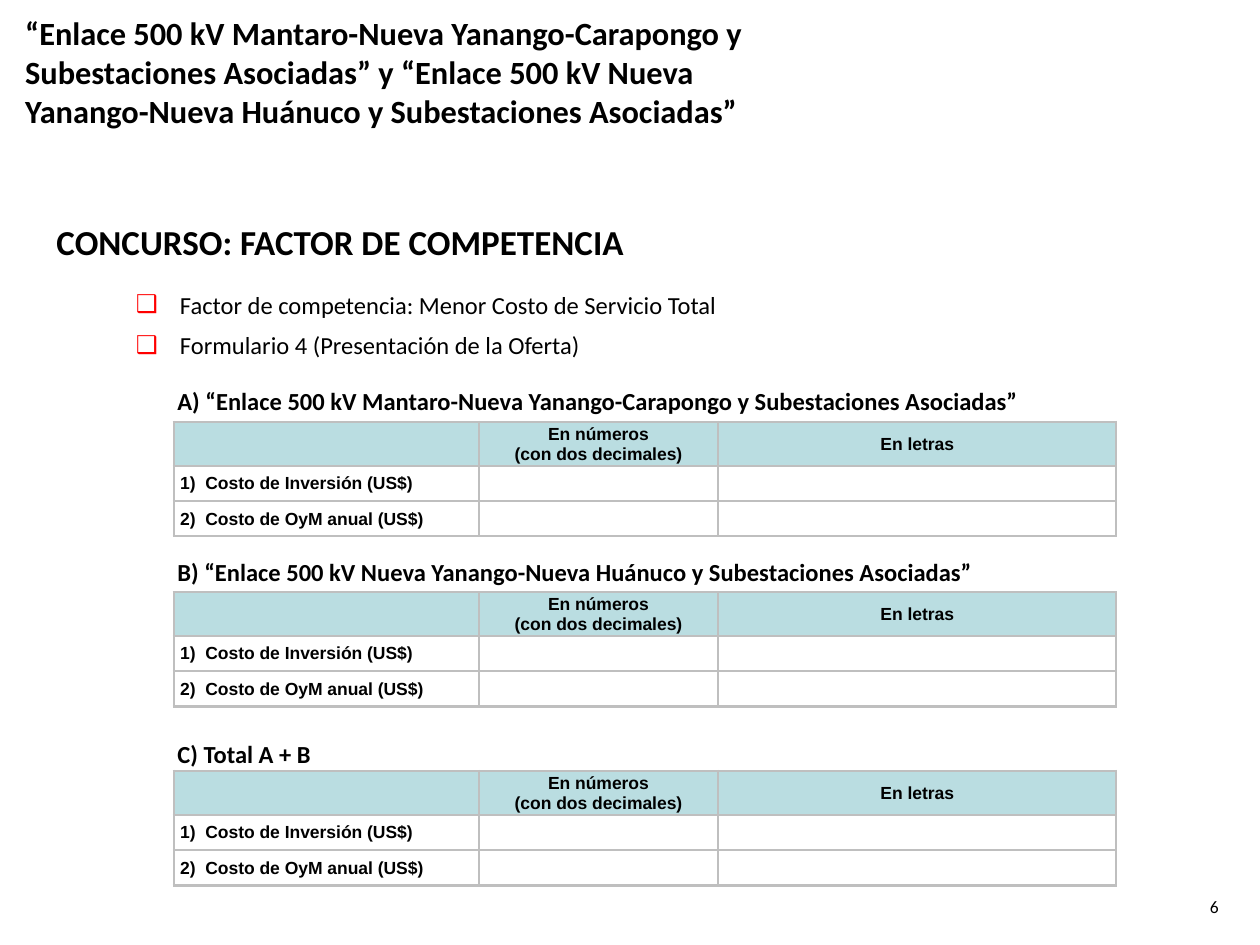
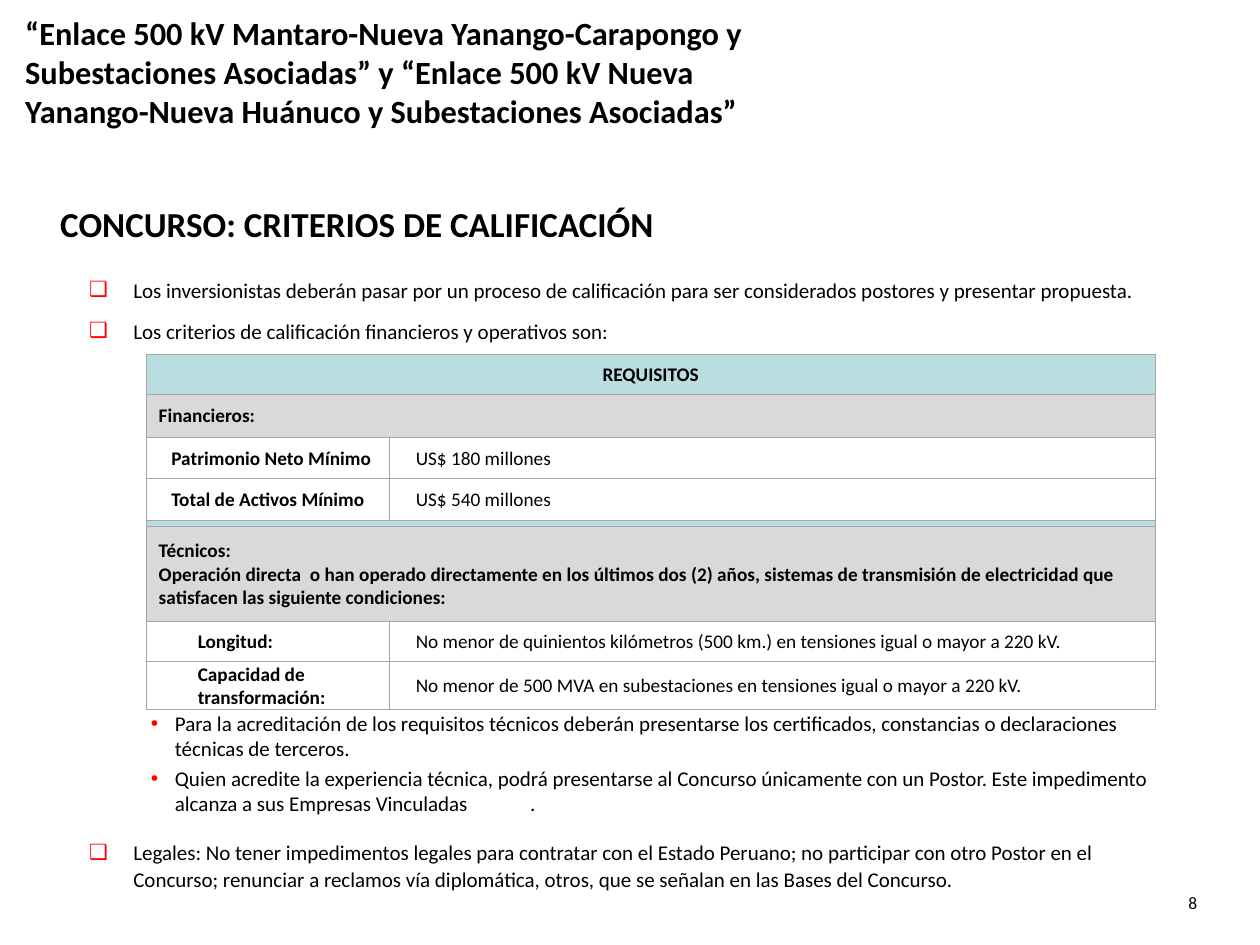
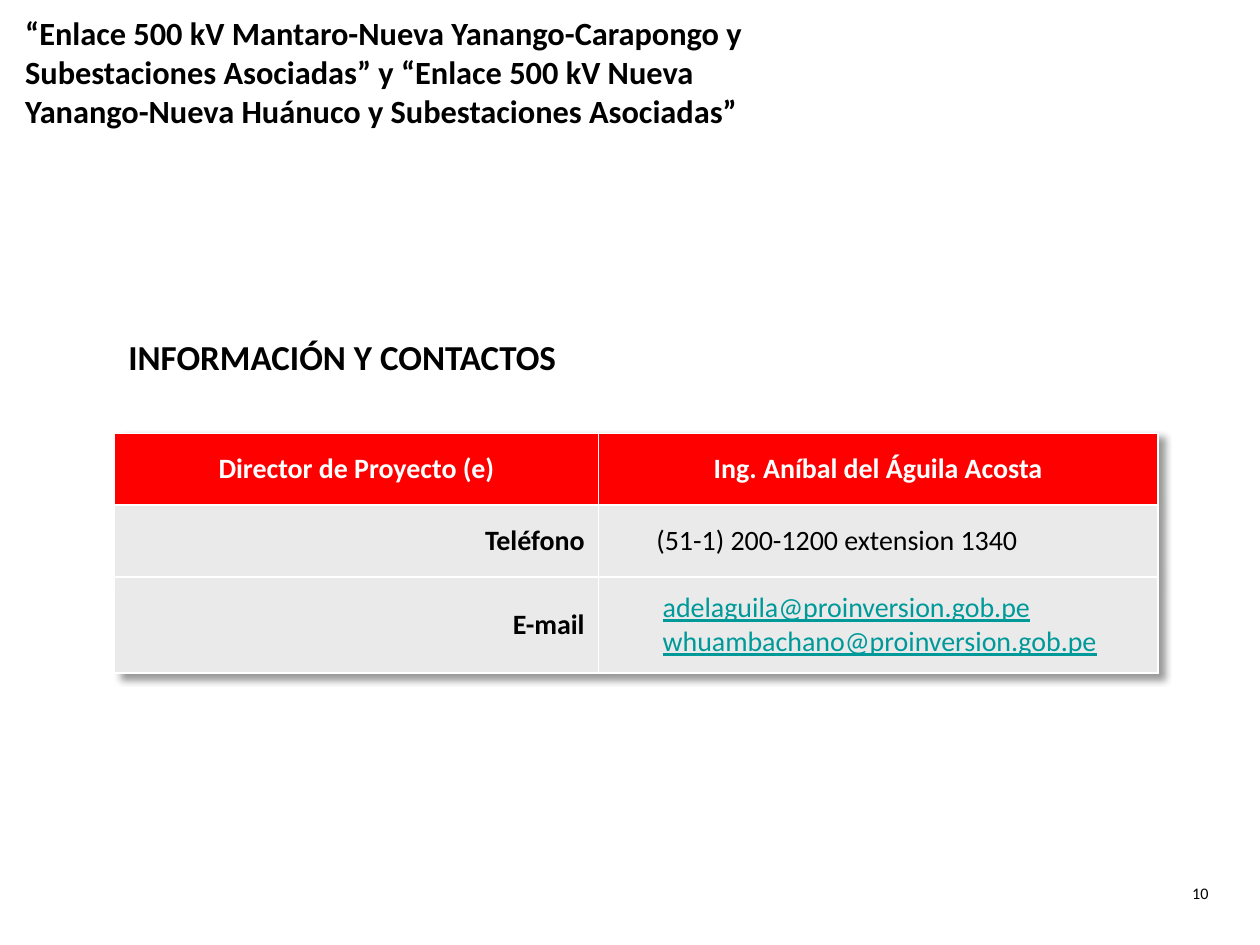
from dataclasses import dataclass

from lxml import etree
from pptx import Presentation
from pptx import util as u
from pptx.dml.color import RGBColor
from pptx.enum import text
from pptx.oxml.ns import qn


@dataclass(frozen=True)
class Theme:
    font: str = "Calibri"
    form_font: str = "Arial"
    black: str = "000000"
    white: str = "FFFFFF"
    red: str = "FF0000"
    aqua: str = "BADDE1"
    grey: str = "D9D9D9"
    pale: str = "EAEAEA"
    link: str = "009999"
    form_rule: str = "BFBFBF"
    criteria_rule: str = "A6A6A6"
    title: float = 18.5
    heading: float = 20
    contact: float = 16
    item: float = 14
    body: float = 12
    criteria: float = 11
    small: float = 10


T = Theme()
LEFT, CENTER, RIGHT, JUSTIFY = (text.PP_ALIGN.LEFT, text.PP_ALIGN.CENTER,
                                text.PP_ALIGN.RIGHT, text.PP_ALIGN.JUSTIFY)
MIDDLE = text.MSO_ANCHOR.MIDDLE


@dataclass
class Para:
    words: str
    size: float
    bold: bool = False
    color: str = T.black
    font: str = T.font
    align: int = LEFT
    indent: float = 0
    hang: float = 0
    bullet: str = ""
    before: float = 0
    after: float = 0
    spacing: float = 1.0
    underline: bool = False


def write(frame, paras, anchor=text.MSO_ANCHOR.TOP):
    frame.word_wrap = True
    frame.vertical_anchor = anchor
    for number, para in enumerate(paras):
        p = frame.add_paragraph() if number else frame.paragraphs[0]
        p.text = para.words
        props = p._p.get_or_add_pPr()
        props.set("marL", str(u.Inches(para.indent)))
        props.set("indent", str(-u.Inches(para.hang)))
        if para.bullet:
            color = etree.SubElement(props, qn("a:buClr"))
            etree.SubElement(color, qn("a:srgbClr"), val=T.red)
            etree.SubElement(props, qn("a:buFont"), typeface=T.form_font)
            etree.SubElement(props, qn("a:buChar"), char=para.bullet)
        p.alignment = para.align
        p.line_spacing = para.spacing
        p.space_before, p.space_after = u.Pt(para.before), u.Pt(para.after)
        p.font.name, p.font.size, p.font.bold = para.font, u.Pt(para.size), para.bold
        p.font.color.rgb = RGBColor.from_string(para.color)
        if para.underline:
            p.font.underline = True


def add_grid(slide, left, top, widths, heights, rule, insets, rows):
    """Add a table of (fill, paragraphs) cells; a row with one cell spans all columns."""
    rule_color, rule_width = rule
    table = slide.shapes.add_table(
        len(heights), len(widths), u.Inches(left), u.Inches(top),
        u.Inches(sum(widths)), u.Inches(sum(heights))).table
    table.first_row = table.horz_banding = False
    props = table._tbl.tblPr
    props.find(qn("a:tableStyleId")).text = "{2D5ABB26-0587-4C30-8999-92F81FD0307C}"
    for column, width in zip(table.columns, widths):
        column.width = u.Inches(width)
    for row, height in zip(table.rows, heights):
        row.height = u.Inches(height)
    for r, row in enumerate(rows):
        if len(row) == 1:
            table.cell(r, 0).merge(table.cell(r, len(widths) - 1))
        for c in range(len(widths)):
            cell = table.cell(r, c)
            fill, paras = row[c] if c < len(row) else (row[0][0], [])
            (cell.margin_left, cell.margin_top,
             cell.margin_right, cell.margin_bottom) = map(u.Inches, insets)
            for side in ("lnL", "lnR", "lnT", "lnB"):
                line = etree.SubElement(cell._tc.get_or_add_tcPr(), qn("a:" + side),
                                        w=str(u.Pt(rule_width)))
                solid = etree.SubElement(line, qn("a:solidFill"))
                etree.SubElement(solid, qn("a:srgbClr"), val=rule_color)
            if fill:
                cell.fill.solid()
                cell.fill.fore_color.rgb = RGBColor.from_string(fill)
            else:
                cell.fill.background()
            if paras:
                write(cell.text_frame, paras)
            else:
                etree.SubElement(cell.text_frame.paragraphs[0]._p,
                                 qn("a:endParaRPr"), sz="100")
            cell.vertical_anchor = MIDDLE
    return table


prs = Presentation()
prs.slide_width, prs.slide_height = u.Inches(10), u.Inches(7.5)
PROJECT_A = "Enlace 500 kV Mantaro-Nueva Yanango-Carapongo y Subestaciones Asociadas"
PROJECT_B = "Enlace 500 kV Nueva Yanango-Nueva Huánuco y Subestaciones Asociadas"

# Project title, section heading and page number
sections = [
    ("CONCURSO: FACTOR DE COMPETENCIA", (0.35, 1.62), "6", (9.23, 7.06), T.small),
    ("CONCURSO: CRITERIOS DE CALIFICACIÓN", (0.38, 1.47), "8", (9.06, 7.03), T.small),
    ("INFORMACIÓN Y CONTACTOS", (0.92, 2.53), "10", (9.15, 6.96), 9.2),
]
for heading, heading_at, page, page_at, page_size in sections:
    slide = prs.slides.add_slide(prs.slide_layouts[5])
    title = slide.shapes.title
    title.left, title.top = 0, u.Inches(0.13)
    title.width, title.height = u.Inches(6.56), u.Inches(0.87)
    title.text_frame.auto_size = text.MSO_AUTO_SIZE.NONE
    write(title.text_frame, [Para(f"“{PROJECT_A}” y “{PROJECT_B}”", T.title,
                                  bold=True, indent=0.1)], MIDDLE)
    heading_box = slide.shapes.add_textbox(*map(u.Inches, (*heading_at, 5.6, 0.6)))
    write(heading_box.text_frame, [Para(heading, T.heading, bold=True)], MIDDLE)
    page_box = slide.shapes.add_textbox(*map(u.Inches, (*page_at, 0.54, 0.32)))
    write(page_box.text_frame, [Para(page, page_size, align=RIGHT)])
factor, criteria, contacts = prs.slides

# Competition factor: two points and three offer forms
points = ["Factor de competencia: Menor Costo de Servicio Total",
          "Formulario 4 (Presentación de la Oferta)"]
for number, point in enumerate(points):
    point_box = factor.shapes.add_textbox(
        *map(u.Inches, (0.98, 2.25 + 0.32 * number, 7.88, 0.35)))
    write(point_box.text_frame,
          [Para(point, T.item, bullet="❑", indent=0.35, hang=0.35)])

form_style = dict(size=T.small, bold=True, font=T.form_font, spacing=1.04)
form_rows = [[(T.aqua, []),
              (T.aqua, [Para(words, align=CENTER, **form_style)
                        for words in ("En números", "(con dos decimales)")]),
              (T.aqua, [Para("En letras", align=CENTER, **form_style)])]]
for cost in ("1)  Costo de Inversión (US$)", "2)  Costo de OyM anual (US$)"):
    form_rows.append([(None, [Para(cost, align=JUSTIFY, **form_style)]),
                      (None, []), (None, [])])

forms = [(f"A) “{PROJECT_A}”", 3.01, 3.35, 0.32),
         (f"B) “{PROJECT_B}”", 4.37, 4.7, 0.34),
         ("C) Total A + B", 5.81, 6.12, 0.34)]
for label, label_top, form_top, header_height in forms:
    label_box = factor.shapes.add_textbox(*map(u.Inches, (1.31, label_top, 7.5, 0.34)))
    write(label_box.text_frame, [Para(label, T.item, bold=True)], MIDDLE)
    add_grid(factor, 1.38, form_top, [2.42, 1.9, 3.16], [header_height, 0.28, 0.28],
             (T.form_rule, 1.5), (0.05, 0, 0.05, 0), form_rows)

# Qualification criteria: text that runs above and below the requirements table
box_item = dict(size=T.body, bullet="❑", indent=0.35, hang=0.35)
dot_item = dict(size=T.body, bullet="•", indent=0.68, hang=0.19)
criteria_box = criteria.shapes.add_textbox(*map(u.Inches, (0.61, 2.15, 8.72, 4.98)))
write(criteria_box.text_frame, [
    Para("Los inversionistas deberán pasar por un proceso de calificación para ser "
         "considerados postores y presentar propuesta.", after=9, **box_item),
    Para("Los criterios de calificación financieros y operativos son:",
         after=6, **box_item),
    Para("Para la acreditación de los requisitos técnicos deberán presentarse los "
         "certificados, constancias o declaraciones técnicas de terceros.",
         before=204, **dot_item),
    Para("Quien acredite la experiencia técnica, podrá presentarse al Concurso "
         "únicamente con un Postor. Este impedimento alcanza a sus Empresas "
         "Vinculadas\t.", before=2.4, **dot_item),
    Para("Legales: No tener impedimentos legales para contratar con el Estado Peruano; "
         "no participar con otro Postor en el Concurso; renunciar a reclamos vía "
         "diplomática, otros, que se señalan en las Bases del Concurso.",
         before=12, after=9, spacing=1.1, **box_item),
])

strong = dict(size=T.criteria, bold=True)
financial, technical = [
    [[(None, [Para(name, indent=indent, **strong)]),
      (None, [Para(minimum, T.criteria, indent=0.2)])] for name, minimum in group]
    for indent, group in (
        (0.19, [("Patrimonio Neto Mínimo", "US$ 180 millones"),
                ("Total de Activos Mínimo", "US$ 540 millones")]),
        (0.4, [("Longitud:", "No menor de quinientos kilómetros (500 km.) en "
                "tensiones igual o mayor a 220 kV."),
               ("Capacidad de transformación:", "No menor de 500 MVA en "
                "subestaciones en tensiones igual o mayor a 220 kV.")]))]
add_grid(criteria, 1.16, 2.81, [1.93, 6.08],
         [0.32, 0.34, 0.33, 0.33, 0.05, 0.75, 0.32, 0.38],
         (T.criteria_rule, 0.5), (0.01, 0.01, 0.01, 0), [
             [(T.aqua, [Para("REQUISITOS", align=CENTER, **strong)])],
             [(T.grey, [Para("Financieros:", indent=0.09, **strong)])],
             *financial,
             [(T.aqua, [])],
             [(T.grey, [Para("Técnicos:", indent=0.09, **strong),
                        Para("Operación directa  o han operado directamente en los "
                             "últimos dos (2) años, sistemas de transmisión de "
                             "electricidad que satisfacen las siguiente condiciones:",
                             indent=0.09, **strong)])],
             *technical,
         ])

# Contacts
header_style = dict(size=T.contact, bold=True, color=T.white, align=CENTER)
name_style = dict(size=T.contact, bold=True, align=RIGHT)
emails = ["adelaguila@proinversion.gob.pe", "whuambachano@proinversion.gob.pe"]
contact_table = add_grid(
    contacts, 0.91, 3.44, [3.84, 4.44], [0.57, 0.57, 0.76],
    (T.white, 1), (0.11, 0.05, 0.11, 0.05), [
        [(T.red, [Para("Director de Proyecto (e)", **header_style)]),
         (T.red, [Para("Ing. Aníbal del Águila Acosta", **header_style)])],
        [(T.pale, [Para("Teléfono", **name_style)]),
         (T.pale, [Para("(51-1) 200-1200 extension 1340", T.contact, indent=0.35)])],
        [(T.pale, [Para("E-mail", **name_style)]),
         (T.pale, [Para(email, T.contact, color=T.link, indent=0.4, underline=True)
                   for email in emails])],
    ])
effects = etree.Element(qn("a:effectLst"))
shadow = etree.SubElement(effects, qn("a:outerShdw"), blurRad=str(u.Pt(4)),
                          dist=str(u.Pt(4)), dir="2700000", algn="tl")
shade = etree.SubElement(shadow, qn("a:srgbClr"), val=T.black)
etree.SubElement(shade, qn("a:alpha"), val="40000")
contact_table._tbl.tblPr.insert(0, effects)

prs.save("out.pptx")
